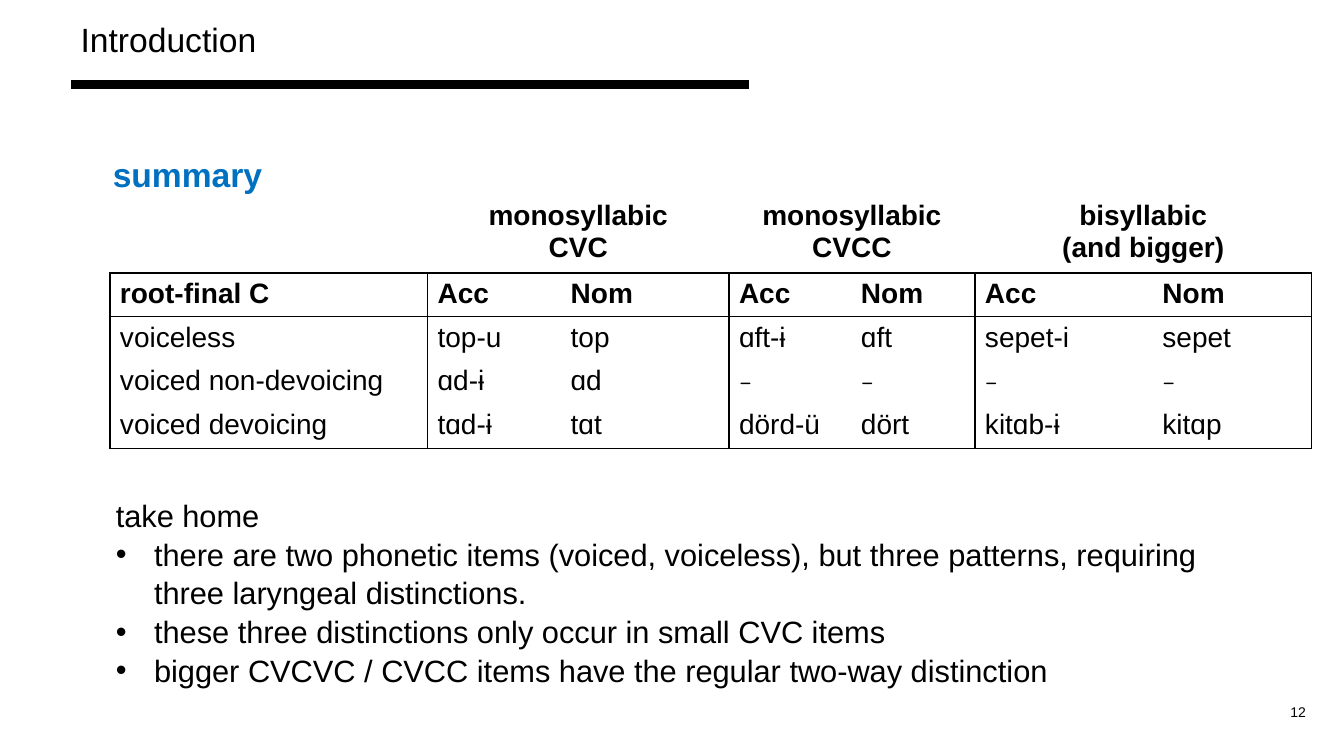
"""Build the summary slide on root-final consonant patterns."""
from lxml.etree import SubElement
from pptx import Presentation
from pptx.dml.color import RGBColor
from pptx.enum.shapes import MSO_CONNECTOR as Connector
from pptx.enum.text import MSO_ANCHOR as Anchor, PP_ALIGN as Align
from pptx.oxml.ns import qn
from pptx.util import Inches, Pt

COLORS = {"ink": "000000", "accent": "0070C0"}
TITLE = "Introduction"
SUMMARY = "summary"
PAGE = "12"
GROUPS = [("monosyllabic", "CVC"), ("monosyllabic", "CVCC"), ("bisyllabic", "(and bigger)")]
PATTERNS = [
    ("root-final C", "Acc", "Nom", "Acc", "Nom", "Acc", "Nom"),
    ("voiceless", "top-u", "top", "ɑft-ɨ", "ɑft", "sepet-i", "sepet"),
    ("voiced non-devoicing", "ɑd-ɨ", "ɑd", "–", "–", "–", "–"),
    ("voiced devoicing", "tɑd-ɨ", "tɑt", "dörd-ü", "dört", "kitɑb-ɨ", "kitɑp"),
]
TAKE_HOME = "take home"
POINTS = [
    "there are two phonetic items (voiced, voiceless), but three patterns, "
    "requiring three laryngeal distinctions.",
    "these three distinctions only occur in small CVC items",
    "bigger CVCVC / CVCC items have the regular two-way distinction",
]
COLUMN_WIDTHS = [3.15, 1.32, 1.67, 1.21, 1.23, 1.76, 1.58]
TABLE_HEIGHT, GROUP_HEIGHT = 2.5, 0.76


def write(frame, lines, size, bold=False, color="ink", align=Align.LEFT, font="Arial", spacing=1.05):
    """Fill a text frame with one paragraph per line."""
    frame.word_wrap = True
    for index, line in enumerate(lines):
        paragraph = frame.paragraphs[0] if index == 0 else frame.add_paragraph()
        paragraph.alignment = align
        paragraph.line_spacing = spacing
        paragraph.space_before = Pt(0)
        run = paragraph.add_run()
        run.text = line
        run.font.name, run.font.size, run.font.bold = font, Pt(size), bold
        run.font.color.rgb = RGBColor.from_string(COLORS[color])


def add_text(slide, box, lines, size, **style):
    """Add a text box and return its frame."""
    frame = slide.shapes.add_textbox(*map(Inches, box)).text_frame
    write(frame, lines, size, **style)
    return frame


def add_bullet(paragraph):
    """Give a paragraph a hanging round bullet."""
    properties = paragraph._p.get_or_add_pPr()
    properties.set("marL", str(Inches(0.38)))
    properties.set("indent", str(Inches(-0.38)))
    SubElement(properties, qn("a:buFont"), typeface="Arial")
    SubElement(properties, qn("a:buChar"), char="•")


def add_borders(cell, row, column):
    """Draw the cell's edges and clear its fill."""
    last = len(PATTERNS)
    edges = {
        "L": row > 0 and (column == 0 or column % 2 == 1),
        "R": row > 0 and column % 2 == 0,
        "T": row in (1, 2),
        "B": row in (0, 1, last),
    }
    properties = cell._tc.get_or_add_tcPr()
    for side, drawn in edges.items():
        line = SubElement(properties, qn(f"a:ln{side}"), w=str(Pt(1)))
        if drawn:
            fill = SubElement(line, qn("a:solidFill"))
            SubElement(fill, qn("a:srgbClr"), val=COLORS["ink"])
        else:
            SubElement(line, qn("a:noFill"))
    cell.fill.background()


def add_patterns(slide):
    """Add the table of consonant patterns."""
    row_count, column_count = len(PATTERNS) + 1, len(COLUMN_WIDTHS)
    table = slide.shapes.add_table(
        row_count, column_count, Inches(1.09), Inches(1.94),
        Inches(sum(COLUMN_WIDTHS)), Inches(TABLE_HEIGHT)).table
    table.first_row = table.horz_banding = False
    for column, width in zip(table.columns, COLUMN_WIDTHS):
        column.width = Inches(width)
    for index, row in enumerate(table.rows):
        body_height = (TABLE_HEIGHT - GROUP_HEIGHT) / len(PATTERNS)
        row.height = Inches(body_height if index else GROUP_HEIGHT)
    for row in range(row_count):
        for column in range(column_count):
            add_borders(table.cell(row, column), row, column)
    for index, group in enumerate(GROUPS):
        cell = table.cell(0, 1 + 2 * index)
        cell.merge(table.cell(0, 2 + 2 * index))
        write(cell.text_frame, group, 20, bold=True, align=Align.CENTER, spacing=1.0)
    for row, forms in enumerate(PATTERNS, 1):
        for column, form in enumerate(forms):
            size, font = (18, "Quicksand") if form == "–" else (20, "Arial")
            write(table.cell(row, column).text_frame, [form], size,
                  bold=row == 1, font=font, spacing=1.0)


def main():
    """Assemble and save the slide."""
    deck = Presentation()
    deck.slide_width, deck.slide_height = Inches(13.33), Inches(7.5)
    slide = deck.slides.add_slide(deck.slide_layouts[5])

    title = slide.shapes.title
    title.left, title.top, title.width, title.height = map(Inches, (0.7, 0.12, 8.9, 0.5))
    title.text_frame.vertical_anchor = Anchor.TOP
    write(title.text_frame, [TITLE], 24)

    rule = slide.shapes.add_connector(
        Connector.STRAIGHT, *map(Inches, (0.7, 0.84, 7.43, 0.84)))
    rule.line.width = Pt(6)
    rule.line.color.rgb = RGBColor.from_string(COLORS["ink"])
    SubElement(rule._element.spPr, qn("a:effectLst"))

    page = add_text(slide, (11.45, 6.9, 1.6, 0.3), [PAGE], 10, align=Align.RIGHT)
    page.vertical_anchor = Anchor.BOTTOM
    add_text(slide, (1.02, 1.46, 8.82, 0.5), [SUMMARY], 24, bold=True, color="accent")
    add_patterns(slide)
    take_home = add_text(slide, (1.05, 4.86, 11.23, 1.95), [TAKE_HOME, *POINTS], 22)
    for paragraph in take_home.paragraphs[1:]:
        add_bullet(paragraph)
    deck.save("out.pptx")


if __name__ == "__main__":
    main()
